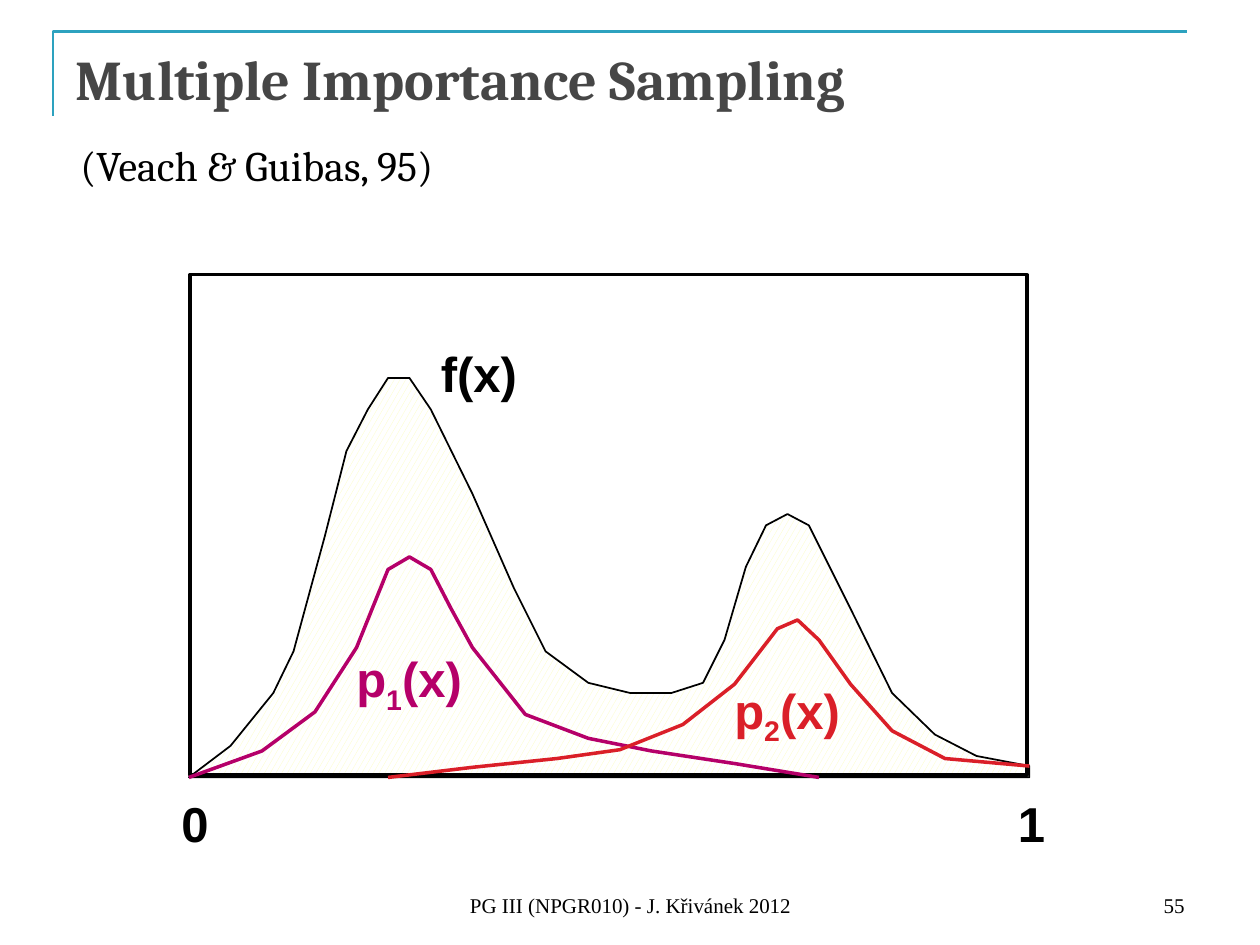
from pptx import Presentation
from pptx.dml.color import RGBColor
from pptx.enum.dml import MSO_PATTERN
from pptx.enum.shapes import MSO_SHAPE
from pptx.enum.text import MSO_ANCHOR, MSO_AUTO_SIZE, PP_ALIGN
from pptx.util import Inches, Pt

RECTANGLE = MSO_SHAPE.RECTANGLE
CONFETTI = MSO_PATTERN.LARGE_CONFETTI
TOP, BOTTOM = MSO_ANCHOR.TOP, MSO_ANCHOR.BOTTOM
LEFT, CENTER, RIGHT = PP_ALIGN.LEFT, PP_ALIGN.CENTER, PP_ALIGN.RIGHT
GROW, FIXED = MSO_AUTO_SIZE.SHAPE_TO_FIT_TEXT, MSO_AUTO_SIZE.NONE
TITLE_ONLY = 5

COLORS = {"black": "000000", "title": "464646", "rule": "2DA2BF",
          "p1": "B50069", "p2": "DA1F28", "dots": "FCFEB9", "white": "FFFFFF"}
RGB = {name: RGBColor.from_string(value) for name, value in COLORS.items()}

prs = Presentation()
prs.slide_width, prs.slide_height = Inches(10), Inches(7.5)
slide = prs.slides.add_slide(prs.slide_layouts[TITLE_ONLY])
shapes = slide.shapes


def write(text, box, font="Arial", size=28, bold=True, color="black", align=LEFT,
          anchor=TOP, wrap=False, subscript="", tail="", holder=None):
    """Write text, an optional subscript and a tail into a holder or a new text box."""
    left, top, width, height = (Inches(value) for value in box)
    if holder is None:
        holder = shapes.add_textbox(left, top, width, height)
    holder.left, holder.top, holder.width, holder.height = left, top, width, height
    frame = holder.text_frame
    frame.word_wrap = wrap
    frame.auto_size = FIXED if wrap else GROW
    frame.vertical_anchor = anchor
    paragraph = frame.paragraphs[0]
    paragraph.alignment = align
    for part, baseline in ((text, 0), (subscript, -25000), (tail, 0)):
        if not part:
            continue
        run = paragraph.add_run()
        run.text = part
        run.font.name, run.font.size, run.font.bold = font, Pt(size), bold
        run.font.color.rgb = RGB[color]
        if baseline:
            run._r.get_or_add_rPr().set("baseline", str(baseline))


def draw_curve(points, color, width, closed=False):
    """Draw straight segments through points given in inches."""
    start, *rest = [(Inches(x), Inches(y)) for x, y in points]
    builder = shapes.build_freeform(*start)
    builder.add_line_segments(rest, close=closed)
    curve = builder.convert_to_shape()
    curve.shadow.inherit = False
    curve.fill.background()
    curve.line.color.rgb = RGB[color]
    curve.line.width = Pt(width)
    return curve


# Title with its corner rule
draw_curve([(0.42, 0.92), (0.42, 0.25), (9.42, 0.25)], "rule", 1.5)
write("Multiple Importance Sampling", (0.5, 0.3, 9, 1.25), font="Cambria", size=32,
      color="title", wrap=True, holder=shapes.title)

# Area under f(x)
integrand = draw_curve(
    [(1.5, 6.17), (1.83, 5.92), (2.17, 5.5), (2.33, 5.17), (2.58, 4.25), (2.75, 3.58),
     (2.92, 3.25), (3.08, 3), (3.25, 3), (3.42, 3.25), (3.75, 3.92), (4.08, 4.67),
     (4.33, 5.17), (4.67, 5.42), (5, 5.5), (5.33, 5.5), (5.58, 5.42), (5.75, 5.08),
     (5.92, 4.5), (6.08, 4.17), (6.25, 4.08), (6.42, 4.17), (6.75, 4.83), (7.08, 5.5),
     (7.42, 5.83), (7.75, 6), (8.17, 6.08), (8.17, 6.17)], "black", 1, closed=True)
integrand.fill.patterned()
integrand.fill.pattern = CONFETTI
integrand.fill.fore_color.rgb = RGB["dots"]
integrand.fill.back_color.rgb = RGB["white"]

# Plot frame
plot = shapes.add_shape(RECTANGLE, Inches(1.51), Inches(2.18), Inches(6.64), Inches(3.97))
plot.shadow.inherit = False
plot.fill.background()
plot.line.color.rgb = RGB["black"]
plot.line.width = Pt(2)

# Sampling densities
draw_curve([(1.5, 6.17), (2.08, 5.96), (2.5, 5.65), (2.83, 5.14), (3.08, 4.52),
            (3.25, 4.42), (3.42, 4.52), (3.58, 4.83), (3.75, 5.14), (4.17, 5.67),
            (4.67, 5.86), (5.17, 5.96), (5.83, 6.06), (6.5, 6.17)], "p1", 2)
draw_curve([(8.17, 6.08), (7.5, 6.02), (7.08, 5.8), (6.75, 5.43), (6.5, 5.08),
            (6.33, 4.92), (6.17, 4.99), (6, 5.21), (5.83, 5.43), (5.42, 5.75),
            (4.92, 5.95), (4.42, 6.02), (3.75, 6.09), (3.08, 6.17)], "p2", 2)

# Curve and axis labels
write("f(x)", (3.4, 2.68, 0.85, 0.56))
for index, left, top in (("1", 2.73, 5.1), ("2", 5.73, 5.35)):
    write("p", (left, top, 1.06, 0.56), color="p" + index, subscript=index, tail="(x)")
for bound, left in (("0", 1.34), ("1", 7.98)):
    write(bound, (left, 6.25, 0.41, 0.56))

# Citation and footer
write("(Veach & Guibas, 95)", (0.54, 1.06, 3.34, 0.5), font="Cambria", size=24, bold=False)
for note, left, width, align in (("PG III (NPGR010) - J. Křivánek 2012", 3.42, 3.17, CENTER),
                                 ("55", 7.17, 2.33, RIGHT)):
    write(note, (left, 6.83, width, 0.5), font="Times New Roman", size=12, bold=False,
          align=align, anchor=BOTTOM, wrap=True)

prs.save("out.pptx")
